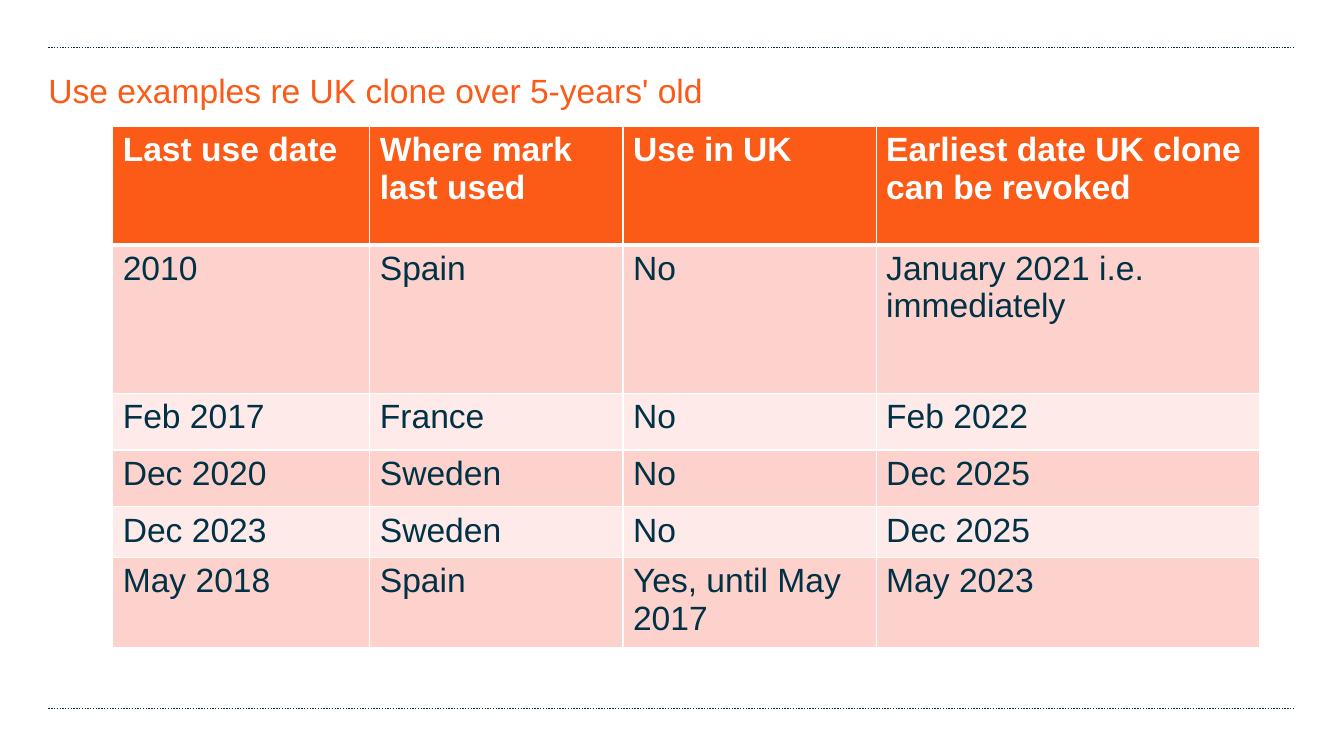
from lxml.etree import SubElement
from pptx import Presentation
from pptx.dml.color import RGBColor
from pptx.enum.dml import MSO_LINE
from pptx.enum.shapes import MSO_CONNECTOR
from pptx.oxml.ns import qn
from pptx.util import Cm, Pt

COLOURS = {
    "orange": "FB5A17",
    "navy": "003145",
    "white": "FFFFFF",
    "dark band": "FDD2CC",
    "light band": "FEEAE8",
}
FORMATS = {
    "title": {"size": Pt(24), "name": "Arial", "bold": False, "colour": "orange"},
    "header": {"size": Pt(24), "name": "Arial", "bold": True, "colour": "white"},
    "body": {"size": Pt(24), "name": "Arial", "bold": False, "colour": "navy"},
}
COLUMN_WIDTHS = [6.48, 6.38, 6.38, 9.67]
ROW_HEIGHTS = [2.99, 3.74, 1.43, 1.43, 1.2, 2.13]
USE_EXAMPLES = [
    ["Last use date", "Where mark last used", "Use in UK",
     "Earliest date UK clone can be revoked"],
    ["2010", "Spain", "No", "January 2021 i.e. immediately"],
    ["Feb 2017", "France", "No", "Feb 2022"],
    ["Dec 2020", "Sweden", "No", "Dec 2025"],
    ["Dec 2023", "Sweden", "No", "Dec 2025"],
    ["May 2018", "Spain", "Yes, until May 2017", "May 2023"],
]


def colour(name):
    return RGBColor.from_string(COLOURS[name])


def write_text(text_frame, text, format_name):
    run = text_frame.paragraphs[0].add_run()
    run.text = text
    for attribute, value in FORMATS[format_name].items():
        if attribute == "colour":
            run.font.color.rgb = colour(value)
        else:
            setattr(run.font, attribute, value)


def add_rule(slide, left, top, width):
    rule = slide.shapes.add_connector(
        MSO_CONNECTOR.STRAIGHT, Cm(left), Cm(top), Cm(left + width), Cm(top))
    rule.line.color.rgb = colour("navy")
    rule.line.width = Pt(1)
    rule.line.dash_style = MSO_LINE.ROUND_DOT
    SubElement(rule._element.spPr, qn("a:effectLst"))


def add_title(slide, left, top, width, height):
    text_frame = slide.shapes.add_textbox(
        Cm(left), Cm(top), Cm(width), Cm(height)).text_frame
    text_frame.word_wrap = True
    for side in ("left", "top", "right", "bottom"):
        setattr(text_frame, f"margin_{side}", 0)
    write_text(text_frame, "Use examples re UK clone over 5-years' old", "title")


def set_borders(cell, bottom_width):
    properties = cell._tc.get_or_add_tcPr()
    widths = {"lnL": 1, "lnR": 1, "lnT": 1, "lnB": bottom_width}
    for position, (tag, width) in enumerate(widths.items()):
        border = SubElement(properties, qn(f"a:{tag}"), w=str(Pt(width)))
        fill = SubElement(border, qn("a:solidFill"))
        SubElement(fill, qn("a:srgbClr"), val=COLOURS["white"])
        properties.insert(position, border)


def add_examples_table(slide, left, top):
    table = slide.shapes.add_table(
        len(ROW_HEIGHTS), len(COLUMN_WIDTHS), Cm(left), Cm(top),
        Cm(sum(COLUMN_WIDTHS)), Cm(sum(ROW_HEIGHTS))).table
    for column, width in zip(table.columns, COLUMN_WIDTHS):
        column.width = Cm(width)
    for row_number, texts in enumerate(USE_EXAMPLES):
        row = table.rows[row_number]
        row.height = Cm(ROW_HEIGHTS[row_number])
        is_header = row_number == 0
        band = "dark band" if row_number % 2 else "light band"
        for cell, text in zip(row.cells, texts):
            cell.fill.solid()
            cell.fill.fore_color.rgb = colour("orange" if is_header else band)
            # The top border of the first body row matches the thick header edge
            set_borders(cell, 3 if is_header else 1)
            if row_number == 1:
                cell._tc.tcPr.find(qn("a:lnT")).set("w", str(Pt(3)))
            write_text(cell.text_frame, text, "header" if is_header else "body")


def build_table_slide(presentation, left, top, width, height):
    slide = presentation.slides.add_slide(presentation.slide_layouts[6])
    # Dotted rules at the top and bottom of the content area
    for rule_top in (top, top + height):
        add_rule(slide, left, rule_top, width)
    # Heading
    add_title(slide, left, top + 0.58, width, 1.02)
    # Table of use examples
    add_examples_table(slide, left + 1.62, top + 1.99)


def main():
    presentation = Presentation()
    presentation.slide_width = Cm(33.87)
    presentation.slide_height = Cm(19.05)
    build_table_slide(presentation, left=1.22, top=1.19, width=31.42, height=16.67)
    presentation.save("out.pptx")


if __name__ == "__main__":
    main()
